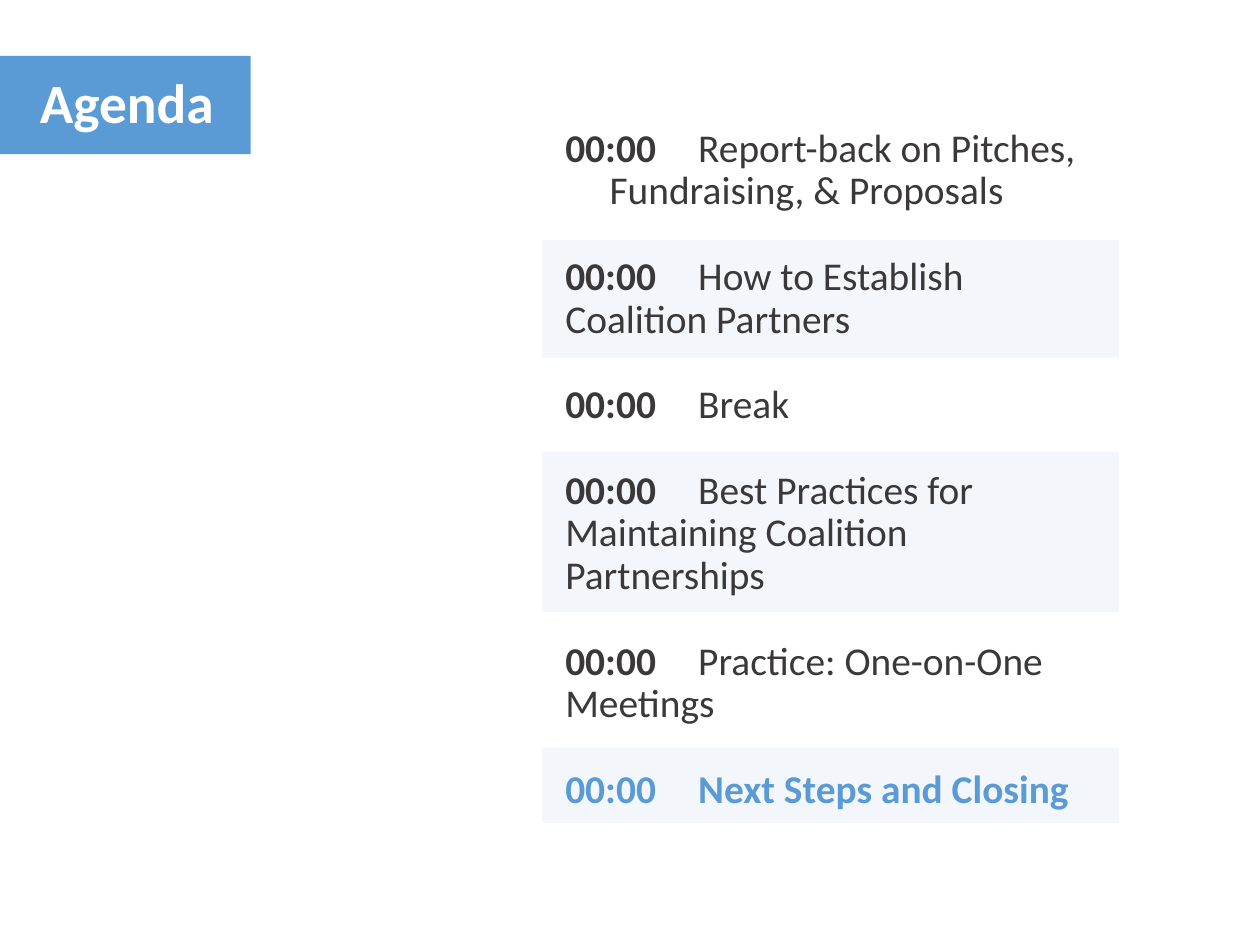
from pptx import Presentation
from pptx.dml.color import RGBColor
from pptx.enum.shapes import MSO_SHAPE as Kind
from pptx.enum.text import MSO_ANCHOR as Anchor, MSO_AUTO_SIZE as Fit, PP_ALIGN as Align
from pptx.oxml.ns import qn
from pptx.util import Pt
from lxml.etree import SubElement as Sub

PX = 9144
BLUE, DARK, WHITE = "5B9BD5", "3A3838", "FFFFFF"
TIME = "00:00\t"
ITEMS = [
    ["Report-back on Pitches,", "\tFundraising, & Proposals"],
    ["How to Establish", "Coalition Partners"],
    ["Break"],
    ["Best Practices for", "Maintaining Coalition", "Partnerships"],
    ["Practice: One-on-One", "Meetings"],
    ["Next Steps and Closing"],
]
BANDS = [(131, 133), (370, 181), (704, 85)]


def px(n):
    return n * PX


def hue(code):
    return RGBColor.from_string(code)


def write(para, text, size=32, color=DARK, bold=False):
    run = para.add_run()
    run.text = text
    font = run.font
    font.name, font.size, font.bold = "Calibri", Pt(size), bold
    font.color.rgb = hue(color)


def place(shape, x, y, w, h):
    shape.left, shape.top, shape.width, shape.height = map(px, (x, y, w, h))
    frame = shape.text_frame
    frame.word_wrap = True
    frame.auto_size = Fit.NONE
    frame.vertical_anchor = Anchor.TOP
    return frame


def block(slide, x, y, w, h, alpha=100):
    shape = slide.shapes.add_shape(Kind.RECTANGLE, *map(px, (x, y, w, h)))
    shape.shadow.inherit = False
    shape.line.fill.background()
    shape.fill.solid()
    shape.fill.fore_color.rgb = hue(BLUE)
    if alpha < 100:
        color = shape._element.spPr.find(qn("a:solidFill"))[0]
        Sub(color, qn("a:alpha"), val=str(alpha * 1000))
    slide.shapes._spTree.insert(2, shape._element)


def head(slide, x, y, w, h):
    block(slide, x, y, w, h)
    frame = place(slide.shapes.title, x + 35, y + 9, w - 2, h - 25)
    para = frame.paragraphs[0]
    para.alignment = Align.LEFT
    write(para, "Agenda", size=45, color=WHITE, bold=True)


def row(para, lines, last):
    para.line_spacing = 0.9
    props = para._p.get_or_add_pPr()
    props.set("marL", "0")
    props.set("indent", "0")
    Sub(props, qn("a:buNone"))
    tabs = Sub(props, qn("a:tabLst"))
    Sub(tabs, qn("a:tab"), pos=str(px(142)), algn="l")
    color = BLUE if last else DARK
    write(para, TIME, color=color, bold=True)
    for i, line in enumerate(lines):
        if i:
            para.add_line_break()
        write(para, line, color=color, bold=last)


def agenda(slide, x, y, w, h):
    for top, tall in BANDS:
        block(slide, x, y + top, w, tall, alpha=7)
    frame = place(slide.placeholders[1], x + 16, y, w - 15, h)
    for i, lines in enumerate(ITEMS):
        para = frame.add_paragraph() if i else frame.paragraphs[0]
        para.space_before = Pt(35 if i else 0)
        row(para, lines, i == len(ITEMS) - 1)


def main():
    deck = Presentation()
    deck.slide_width, deck.slide_height = px(1422), px(1067)
    slide = deck.slides.add_slide(deck.slide_layouts[1])
    head(slide, 0, 63, 283, 111)
    agenda(slide, 612, 140, 651, 786)
    deck.save("out.pptx")


if __name__ == "__main__":
    main()
